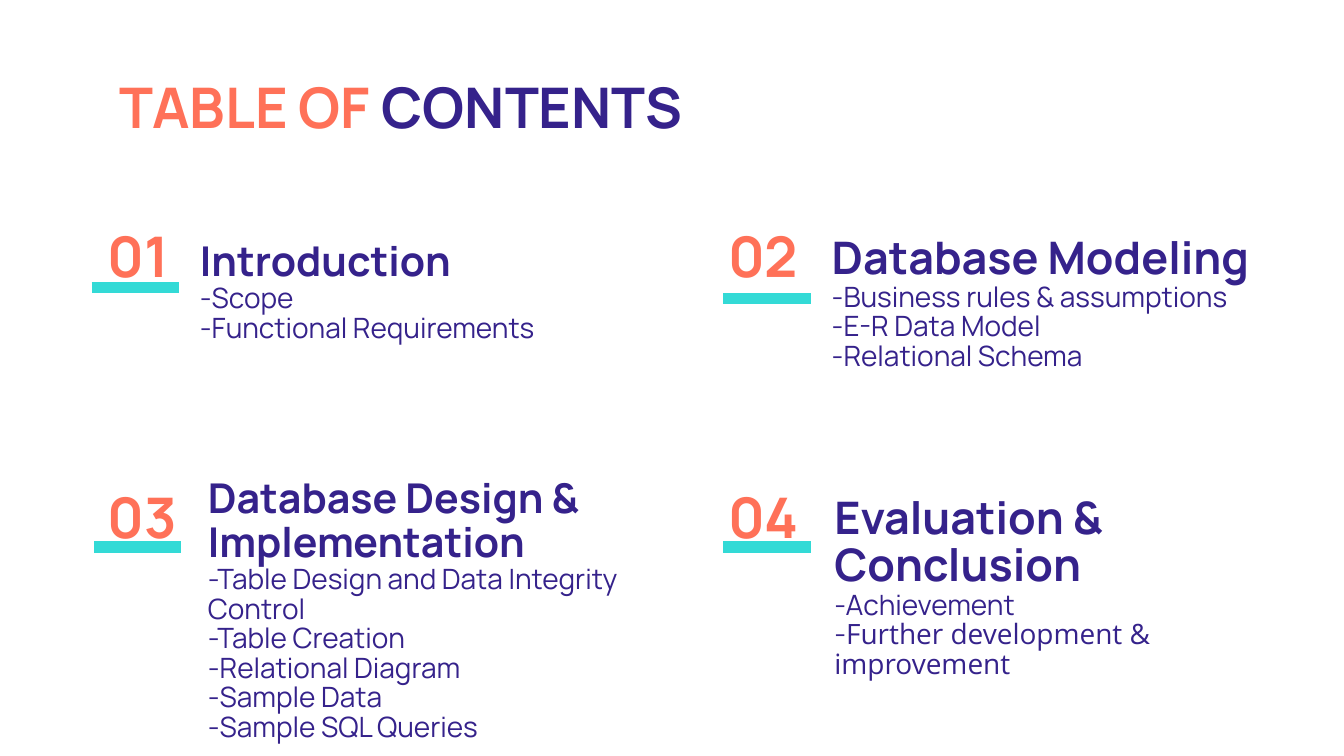
from lxml import etree
from pptx import Presentation
from pptx.dml.color import RGBColor
from pptx.enum import shapes, text
from pptx.oxml import ns
from pptx.util import Cm, Pt

CORAL = RGBColor(0xFF, 0x71, 0x58)
INDIGO = RGBColor(0x35, 0x22, 0x8B)
TURQUOISE = RGBColor(0x33, 0xDA, 0xD6)

presentation = Presentation()
presentation.slide_width = Cm(25.4)
presentation.slide_height = Cm(14.29)
slide = presentation.slides.add_slide(presentation.slide_layouts[6])


def add_text_box(paragraphs, box, anchor, spacing=1.0):
    shape = slide.shapes.add_textbox(*(Cm(length) for length in box))
    frame = shape.text_frame
    frame.word_wrap = True
    frame.vertical_anchor = anchor
    frame.margin_left = frame.margin_right = Cm(0.25)
    frame.margin_top = frame.margin_bottom = Cm(0.25)
    for index, runs in enumerate(paragraphs):
        paragraph = frame.add_paragraph() if index else frame.paragraphs[0]
        paragraph.line_spacing = spacing
        for words, style in runs:
            add_run(paragraph, words, **style)


def add_run(paragraph, words, size=15, bold=False, color=INDIGO, font="Manrope"):
    run = paragraph.add_run()
    run.text = words
    run.font.size = Pt(size)
    run.font.bold = bold
    run.font.name = font
    run.font.color.rgb = color


TOP = text.MSO_ANCHOR.TOP
MIDDLE = text.MSO_ANCHOR.MIDDLE
BOTTOM = text.MSO_ANCHOR.BOTTOM
NUMBER = {"size": 30, "bold": True, "color": CORAL}

add_text_box(
    [[("TABLE OF ", NUMBER), ("CONTENTS", {**NUMBER, "color": INDIGO})]],
    (2.01, 1.12, 21.41, 1.6), TOP)

sections = [
    ("Introduction", 22, ["-Scope", "-Functional Requirements"],
     (3.53, 2.9, 9.96, 3.86), BOTTOM, (1.73, 5.44)),
    ("Database Modeling", 24,
     ["-Business rules & assumptions", "-E-R Data Model", "-Relational Schema"],
     (15.47, 3.56, 9.27, 3.73), BOTTOM, (13.67, 5.64)),
    ("Database Design & Implementation", 22,
     ["-Table Design and Data Integrity Control", "-Table Creation",
      "-Relational Diagram", "-Sample Data", "-Sample SQL Queries"],
     (3.68, 7.95, 9.55, 6.35), BOTTOM, (1.78, 10.34)),
    ("Evaluation & Conclusion", 24,
     ["-Achievement", "-Further development & improvement"],
     (15.52, 7.95, 9.88, 6.35), MIDDLE, (13.67, 10.34)),
]

for index, (heading, size, items, box, anchor, (left, top)) in enumerate(sections):
    row, column = divmod(index, 2)
    paragraphs = [[(heading, {"size": size, "bold": True})]]
    for item in items:
        if item.startswith("-Further"):
            paragraphs.append([("-", {}), (item[1:], {"font": "Open Sans"})])
        else:
            paragraphs.append([(item, {})])
    add_text_box(paragraphs, box, anchor, spacing=0.88)
    add_text_box([[(f"{index + 1:02}", NUMBER)]],
                 (1.78 + 11.73 * column, 4.22 + 4.92 * row, 1.96, 1.22), MIDDLE)

    underline = slide.shapes.add_connector(
        shapes.MSO_CONNECTOR.STRAIGHT, Cm(left), Cm(top), Cm(left + 1.65), Cm(top))
    underline.line.color.rgb = TURQUOISE
    underline.line.width = Pt(6)
    etree.SubElement(underline._element.spPr, ns.qn("a:effectLst"))

presentation.save("out.pptx")
